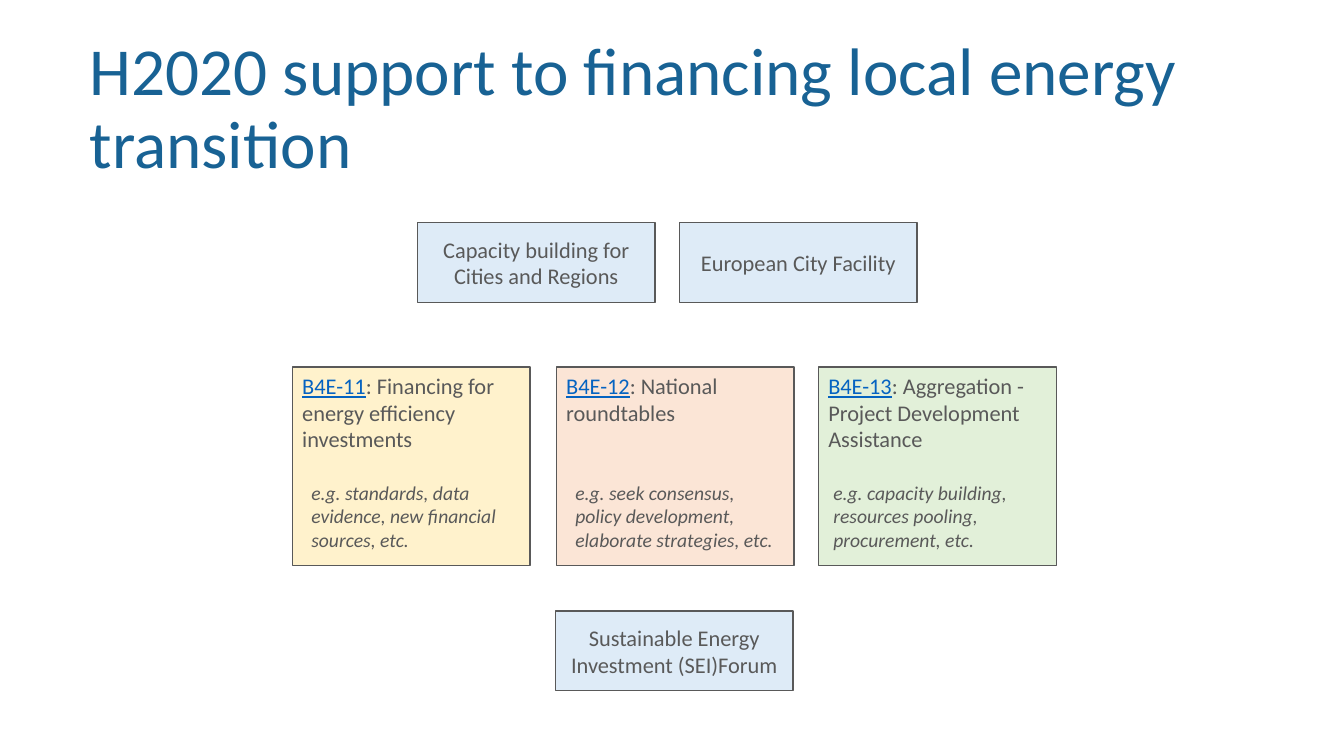
"""Build the slide on H2020 support to financing the local energy transition."""
from pptx import Presentation
from pptx import util as u
from pptx.dml.color import RGBColor
from pptx.enum import shapes, text

COLORS = {
    "title": "186294", "body": "595959", "link": "0563C1", "blue": "DEEBF7",
    "yellow": "FFF2CC", "orange": "FBE5D6", "green": "E2F0D9",
}
BOX_WIDTH = 169.9

presentation = Presentation()
presentation.slide_width = u.Pt(960)
presentation.slide_height = u.Pt(540)
slide = presentation.slides.add_slide(presentation.slide_layouts[6])


def write(shape, content, size=16, color="body", code="", italic=False,
          align=text.PP_ALIGN.LEFT, anchor=text.MSO_ANCHOR.TOP, spacing=1.0):
    """Fill a shape with one paragraph, opened by an underlined code if given."""
    frame = shape.text_frame
    frame.word_wrap = True
    frame.vertical_anchor = anchor
    paragraph = frame.paragraphs[0]
    paragraph.alignment = align
    paragraph.line_spacing = spacing
    for part, part_color, underline in ((code, "link", True), (content, color, False)):
        if part:
            run = paragraph.add_run()
            run.text = part
            run.font.name = "Calibri"
            run.font.size = u.Pt(size)
            run.font.italic = italic
            run.font.underline = underline
            run.font.color.rgb = RGBColor.from_string(COLORS[part_color])


def add_box(left, top, height, fill):
    """Add an outlined rectangle of the common width."""
    shape = slide.shapes.add_shape(
        shapes.MSO_SHAPE.RECTANGLE, u.Pt(left), u.Pt(top), u.Pt(BOX_WIDTH), u.Pt(height))
    shape.shadow.inherit = False
    shape.fill.solid()
    shape.fill.fore_color.rgb = RGBColor.from_string(COLORS[fill])
    shape.line.color.rgb = RGBColor.from_string(COLORS["body"])
    shape.line.width = u.Pt(1)
    return shape


title = slide.shapes.add_textbox(u.Pt(57), u.Pt(22.3), u.Pt(850.3), u.Pt(113))
write(title, "H2020 support to financing local energy transition", size=48,
      color="title", anchor=text.MSO_ANCHOR.MIDDLE, spacing=0.9)

topics = [
    (208.8, "yellow", "B4E-11", ": Financing for energy efficiency investments",
     6.5, 165.6, "e.g. standards, data evidence, new financial sources, etc."),
    (397.4, "orange", "B4E-12", ": National roundtables",
     6.5, 162.7, "e.g. seek consensus, policy development, elaborate strategies, etc."),
    (584.6, "green", "B4E-13", ": Aggregation - Project Development Assistance",
     3.6, 162.7, "e.g. capacity building, resources pooling, procurement, etc."),
]
for left, fill, code, heading, indent, width, examples in topics:
    write(add_box(left, 262.1, 141.8, fill), heading, code=code)
    note = slide.shapes.add_textbox(u.Pt(left + indent), u.Pt(339.8), u.Pt(width), u.Pt(58.3))
    write(note, examples, size=14, italic=True)

initiatives = [
    (298.1, 159.1, "Capacity building for Cities and Regions"),
    (485.3, 159.1, "European City Facility"),
    (396.7, 436.3, "Sustainable Energy Investment (SEI)Forum"),
]
for left, top, label in initiatives:
    write(add_box(left, top, 56.9, "blue"), label,
          align=text.PP_ALIGN.CENTER, anchor=text.MSO_ANCHOR.MIDDLE)

presentation.save("out.pptx")
